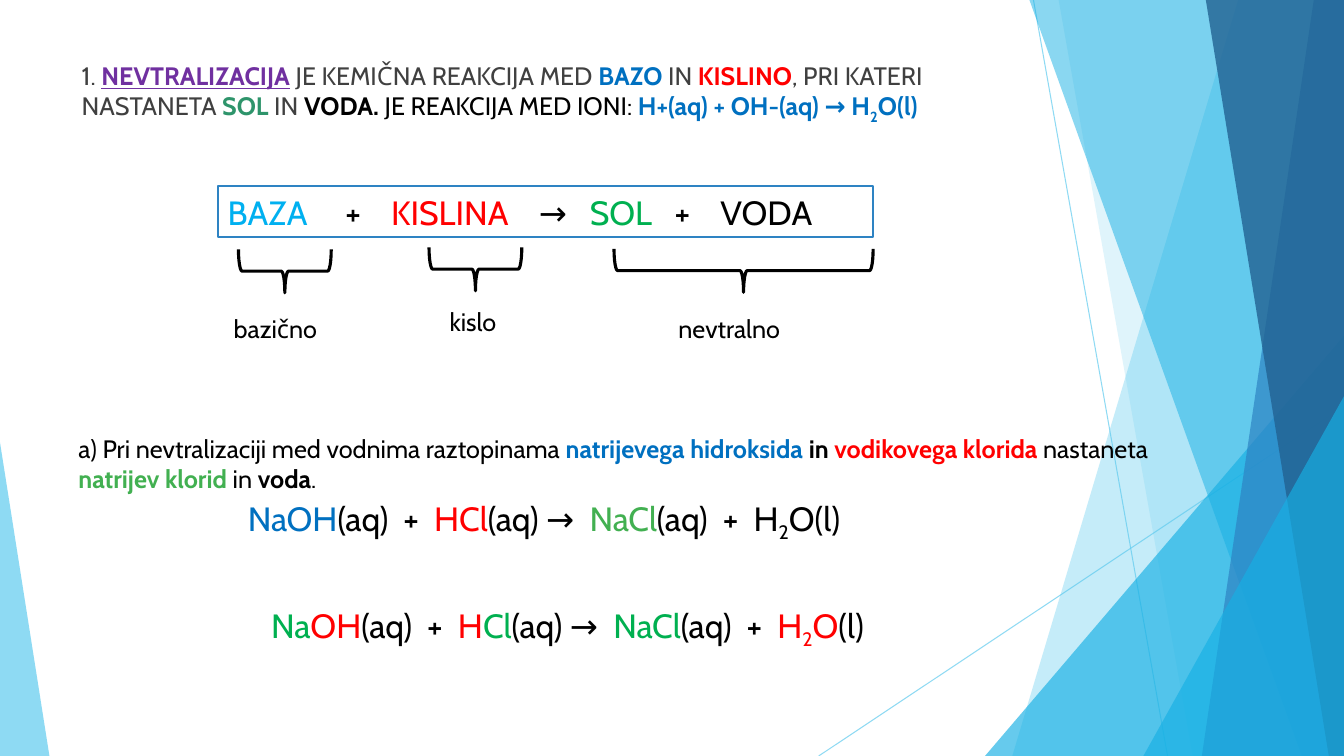
from lxml.etree import SubElement
from pptx import Presentation
from pptx.dml.color import RGBColor as RGB
from pptx.enum.shapes import MSO_CONNECTOR as LINE, MSO_SHAPE as SHAPE
from pptx.enum.text import MSO_ANCHOR as ANCHOR, MSO_AUTO_SIZE as FIT, PP_ALIGN as ALIGN
from pptx.oxml.ns import qn
from pptx.util import Pt

PX = 9144
WIDE, HIGH = 1333, 750
FONT = "Cabin"

WHITE = RGB(0xFF, 0xFF, 0xFF)
BLACK = RGB(0x00, 0x00, 0x00)
GREY = RGB(0x40, 0x40, 0x40)
RED = RGB(0xFF, 0x00, 0x00)
PURPLE = RGB(0x70, 0x30, 0xA0)
BLUE = RGB(0x00, 0x70, 0xC0)
AZURE = RGB(0x00, 0xB0, 0xF0)
GREEN = RGB(0x00, 0xB0, 0x50)
LEAF = RGB(0x42, 0xB0, 0x51)
TEAL = RGB(0x2E, 0x94, 0x6B)
SKY = RGB(0x5F, 0xCB, 0xEF)
CYAN = RGB(0x17, 0xB0, 0xE4)
STEEL = RGB(0x2E, 0x83, 0xC3)
NAVY = RGB(0x22, 0x62, 0x92)


def tint(fill, color, alpha):
    fill.solid()
    fill.fore_color.rgb = color
    for node in fill._xPr.iter(qn("a:srgbClr")):
        SubElement(node, qn("a:alpha"), val=str(alpha * 1000))


def write(frame, size, runs):
    para = frame.paragraphs[0]
    para.alignment = ALIGN.LEFT
    for text, color, style in runs:
        run = para.add_run()
        run.text = text
        font = run.font
        font.name, font.size = FONT, Pt(size)
        font.color.rgb = color
        font.bold = "b" in style
        font.underline = "u" in style
        if "s" in style:
            run._r.get_or_add_rPr().set("baseline", "-25000")


deck = Presentation()
deck.slide_width, deck.slide_height = WIDE * PX, HIGH * PX
slide = deck.slides.add_slide(deck.slide_layouts[1])
shapes = slide.shapes
title, body = slide.placeholders
title._element.getparent().remove(title._element)

for ends in [(1025, 0, 1158, HIGH), (WIDE, 403, 812, HIGH)]:
    ray = shapes.add_connector(LINE.STRAIGHT, *[n * PX for n in ends])
    ray.line.width = Pt(0.75)
    tint(ray.line.fill, SKY, 70)
    SubElement(ray._element.spPr, qn("a:effectLst"))

facets = [
    ("band", (1228, 1004), SKY, 36),
    ("band", (1050, 1183), SKY, 20),
    ("peak", (977, 333, 356, 417, 1), CYAN, 66),
    ("band", (1021, 1291), CYAN, 50),
    ("band", (1303, 1192), STEEL, 70),
    ("band", (1196, 1318), NAVY, 80),
    ("peak", (1134, 393, 199, 357, 1), CYAN, 66),
    ("peak", (0, 439, 49, 311, 0), SKY, 70),
]
for kind, place, color, alpha in facets:
    if kind == "band":
        top, foot = place
        path = shapes.build_freeform(top, 0, scale=PX)
        path.add_line_segments([(WIDE, 0), (WIDE, HIGH), (foot, HIGH)])
        facet = path.convert_to_shape()
    else:
        *rect, tip = place
        facet = shapes.add_shape(SHAPE.ISOSCELES_TRIANGLE, *[n * PX for n in rect])
        facet.adjustments[0] = tip
    facet.shadow.inherit = False
    facet.line.fill.background()
    tint(facet.fill, color, alpha)

shapes._spTree.append(body._element)
body.left, body.top, body.width, body.height = [n * PX for n in (71, 55, 940, 80)]
frame = body.text_frame
frame.auto_size = FIT.NONE
frame.vertical_anchor = ANCHOR.TOP
para = frame.paragraphs[0]
para.space_before = Pt(10)
props = para._p.get_or_add_pPr()
props.set("marL", "0")
props.set("indent", "0")
SubElement(props, qn("a:buNone"))
write(frame, 18, [
    ("1. ", GREY, ""),
    ("NEVTRALIZACIJA", PURPLE, "bu"),
    (" JE KEMIČNA REAKCIJA MED ", GREY, ""),
    ("BAZO ", BLUE, "b"),
    ("IN ", GREY, ""),
    ("KISLINO", RED, "b"),
    (", PRI KATERI NASTANETA ", GREY, ""),
    ("SOL", TEAL, "b"),
    (" IN ", GREY, ""),
    ("VODA. ", BLACK, "b"),
    ("JE REAKCIJA MED IONI: ", BLACK, ""),
    ("H+(aq) + OH-(aq) → H", BLUE, "b"),
    ("2", BLUE, "bs"),
    ("O(l)", BLUE, "b"),
])

box = shapes.add_shape(SHAPE.RECTANGLE, *[n * PX for n in (216, 185, 650, 50)])
box.shadow.inherit = False
box.fill.solid()
box.fill.fore_color.rgb = WHITE
box.line.color.rgb = STEEL
box.line.width = Pt(1.5)
box.text_frame.word_wrap = True
box.text_frame.auto_size = FIT.SHAPE_TO_FIT_TEXT
box.text_frame.vertical_anchor = ANCHOR.TOP
write(box.text_frame, 24, [
    ("BAZA", AZURE, ""),
    ("     +    ", BLACK, ""),
    ("KISLINA    ", RED, ""),
    ("→   ", BLACK, ""),
    ("SOL", GREEN, ""),
    ("   +    VODA", BLACK, ""),
])

for left, top, span in [(261, 223, 92), (450, 221, 92), (716, 140, 257)]:
    brace = shapes.add_shape(SHAPE.RIGHT_BRACE, left * PX, top * PX, 43 * PX, span * PX)
    brace.rotation = 90
    brace.shadow.inherit = False
    brace.fill.background()
    brace.line.color.rgb = BLACK
    brace.line.width = Pt(2.25)

notes = [
    ((436, 299, 71, 40), False, 18, [("kislo", BLACK, "")]),
    ((222, 306, 106, 40), False, 18, [("bazično", BLACK, "")]),
    ((663, 306, 128, 40), False, 18, [("nevtralno", BLACK, "")]),
    ((68, 425, 1107, 71), True, 18, [
        ("a) Pri nevtralizaciji med vodnima raztopinama ", BLACK, ""),
        ("natrijevega hidroksida ", BLUE, "b"),
        ("in ", BLACK, "b"),
        ("vodikovega klorida ", RED, "b"),
        ("nastaneta ", BLACK, ""),
        ("natrijev klorid ", LEAF, "b"),
        ("in ", BLACK, ""),
        ("voda", BLACK, "b"),
        (".", BLACK, ""),
    ]),
    ((236, 489, 728, 50), True, 24, [
        ("NaOH", BLUE, ""),
        ("(aq)  +  ", BLACK, ""),
        ("HCl", RED, ""),
        ("(aq) →  ", BLACK, ""),
        ("NaCl", LEAF, ""),
        ("(aq)  +  H", BLACK, ""),
        ("2", BLACK, "s"),
        ("O(l)", BLACK, ""),
    ]),
    ((259, 595, 726, 50), True, 24, [
        ("Na", GREEN, ""),
        ("OH", RED, ""),
        ("(aq)  +  ", BLACK, ""),
        ("H", RED, ""),
        ("Cl", GREEN, ""),
        ("(aq) →  ", BLACK, ""),
        ("NaCl", GREEN, ""),
        ("(aq)  +  ", BLACK, ""),
        ("H", RED, ""),
        ("2", RED, "s"),
        ("O", RED, ""),
        ("(l)", BLACK, ""),
    ]),
]
for rect, wrap, size, runs in notes:
    frame = shapes.add_textbox(*[n * PX for n in rect]).text_frame
    frame.word_wrap = wrap
    frame.auto_size = FIT.SHAPE_TO_FIT_TEXT
    write(frame, size, runs)

deck.save("out.pptx")
